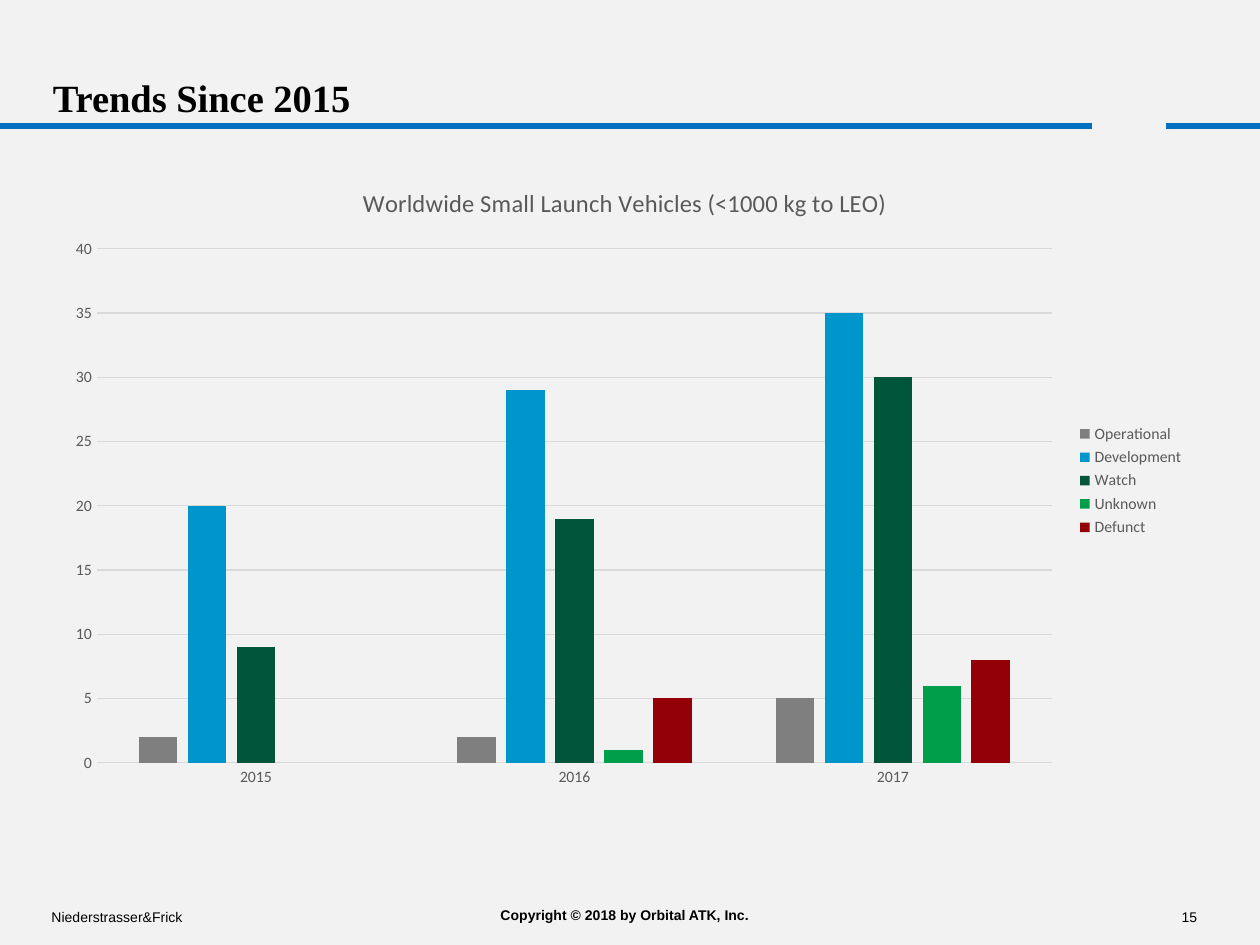
from pptx import Presentation, util as u
from pptx.chart.data import CategoryChartData
from pptx.dml.color import RGBColor
from pptx.enum import chart as ch, shapes, text
from pptx.oxml.ns import qn
from lxml import etree

THEME = dict(
    bg="F2F2F2", rule="0070C0", ink="000000", label="595959", grid="D9D9D9",
    title_font="Times New Roman", chart_font="Calibri", footer_font="Arial",
    title_size=22, chart_title_size=14, label_size=9, footer_size=8,
    rule_width=3.5, grid_width=0.75,
)

RULES = [(0, 8.67), (9.25, 10)]
RULE_Y = 1
FOOTER = dict(font=THEME["footer_font"], size=THEME["footer_size"])
TEXTS = [
    ("Trends Since 2015", (0.42, 0.17, 6.42, 0.83),
     dict(font=THEME["title_font"], size=THEME["title_size"], bold=True,
          anchor="BOTTOM", inset=0)),
    ("Niederstrasser&Frick", (0.31, 7.15, 2.58, 0.25), FOOTER),
    ("Copyright © 2018 by Orbital ATK, Inc.", (3.96, 7.2, 2, 0.13),
     dict(FOOTER, bold=True, align="CENTER", inset=0, inset_y=0, wrap=False)),
    ("15", (7.1, 7.15, 2.5, 0.25), dict(FOOTER, align="RIGHT")),
]

CHART_BOX = (0.42, 1.29, 9.08, 5.05)
CHART_TITLE = "Worldwide Small Launch Vehicles (<1000 kg to LEO)"
YEARS = ["2015", "2016", "2017"]
SERIES = [
    ("Operational", (2, 2, 5), "7F7F7F"),
    ("Development", (20, 29, 35), "0095CB"),
    ("Watch", (9, 19, 30), "00553A"),
    ("Unknown", (None, 1, 6), "009D4B"),
    ("Defunct", (None, 5, 8), "930007"),
]


def rgb(name):
    return RGBColor.from_string(name)


def set_font(font, name, size, color, bold=False):
    font.name, font.size, font.bold = name, u.Pt(size), bold
    font.color.rgb = rgb(color)


def set_line(line, color, width):
    line.color.rgb = rgb(color)
    line.width = u.Pt(width)


def add_text(s, content, box, font, size, bold=False, align="LEFT",
             anchor="MIDDLE", inset=0.1, inset_y=0.05, wrap=True):
    tf = s.shapes.add_textbox(*map(u.Inches, box)).text_frame
    tf.word_wrap = wrap
    tf.vertical_anchor = getattr(text.MSO_ANCHOR, anchor)
    tf.margin_left = tf.margin_right = u.Inches(inset)
    tf.margin_top = tf.margin_bottom = u.Inches(inset_y)
    p = tf.paragraphs[0]
    p.alignment = getattr(text.PP_ALIGN, align)
    r = p.add_run()
    r.text = content
    set_font(r.font, font, size, THEME["ink"], bold)


def add_rule(s, x1, x2):
    line = s.shapes.add_connector(
        shapes.MSO_CONNECTOR.STRAIGHT,
        *map(u.Inches, (x1, RULE_Y, x2, RULE_Y)))
    set_line(line.line, THEME["rule"], THEME["rule_width"])
    etree.SubElement(line._element.spPr, qn("a:effectLst"))


def add_launch_chart(s):
    data = CategoryChartData()
    data.categories = YEARS
    for name, values, _ in SERIES:
        data.add_series(name, values)
    chart = s.shapes.add_chart(ch.XL_CHART_TYPE.COLUMN_CLUSTERED,
                               *map(u.Inches, CHART_BOX), data).chart
    label = (THEME["chart_font"], THEME["label_size"], THEME["label"])
    set_font(chart.font, *label)

    chart.has_title = True
    tf = chart.chart_title.text_frame
    tf.text = CHART_TITLE
    set_font(tf.paragraphs[0].runs[0].font, THEME["chart_font"],
             THEME["chart_title_size"], THEME["label"])
    chart.chart_title.include_in_layout = False

    chart.has_legend = True
    chart.legend.position = ch.XL_LEGEND_POSITION.RIGHT
    chart.legend.include_in_layout = False
    set_font(chart.legend.font, *label)

    cat, val = chart.category_axis, chart.value_axis
    for axis in (cat, val):
        axis.major_tick_mark = axis.minor_tick_mark = ch.XL_TICK_MARK.NONE
        set_font(axis.tick_labels.font, *label)
    val.minimum_scale, val.maximum_scale, val.major_unit = 0, 40, 5
    val.format.line.fill.background()
    for line in (cat.format.line, val.major_gridlines.format.line):
        set_line(line, THEME["grid"], THEME["grid_width"])

    plot = chart.plots[0]
    plot.vary_by_categories = False
    plot.gap_width, plot.overlap = 219, -27
    for series, (_, _, color) in zip(plot.series, SERIES):
        series.format.fill.solid()
        series.format.fill.fore_color.rgb = rgb(color)
        series.invert_if_negative = False


def main():
    prs = Presentation()
    prs.slide_width, prs.slide_height = u.Inches(10), u.Inches(7.5)
    s = prs.slides.add_slide(prs.slide_layouts[6])
    s.background.fill.solid()
    s.background.fill.fore_color.rgb = rgb(THEME["bg"])
    for ends in RULES:
        add_rule(s, *ends)
    add_launch_chart(s)
    for content, box, style in TEXTS:
        add_text(s, content, box, **style)
    prs.save("out.pptx")


if __name__ == "__main__":
    main()
